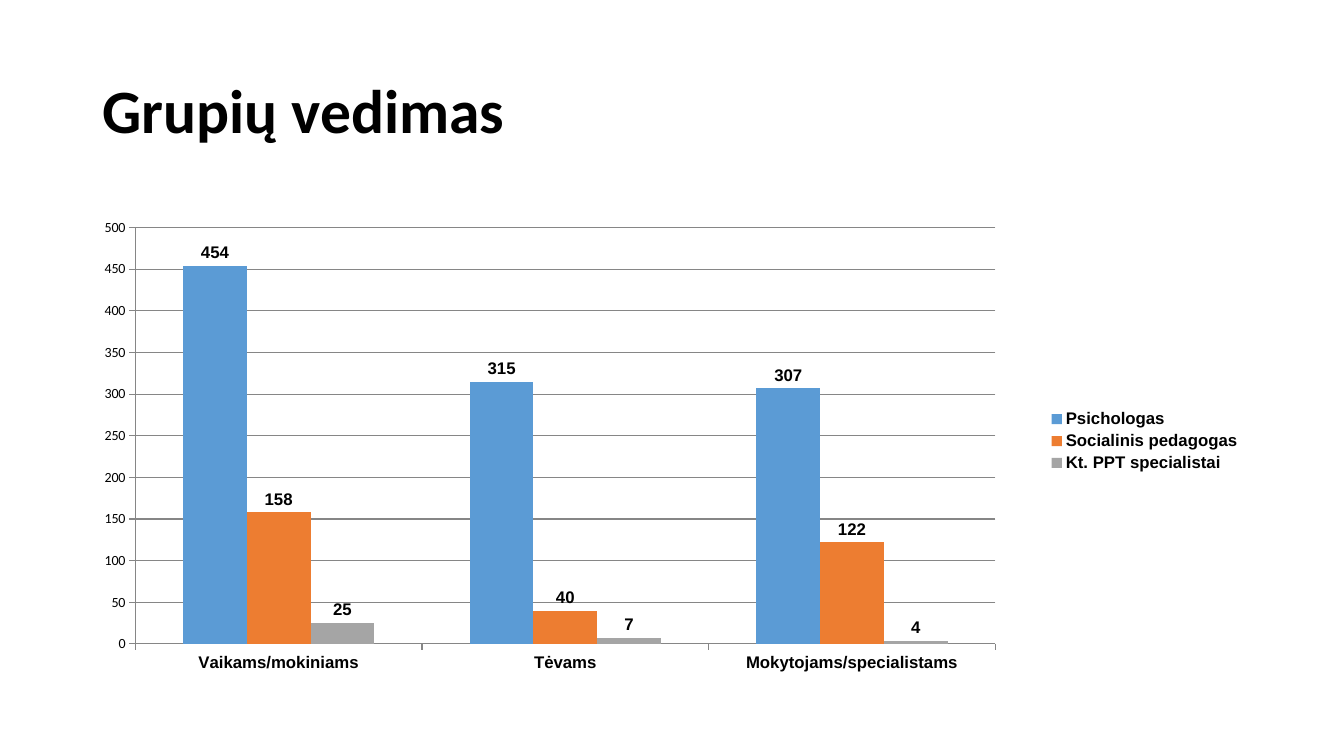
from lxml import etree
from pptx import Presentation
from pptx.chart.data import CategoryChartData
from pptx.dml.color import RGBColor
from pptx.enum.chart import XL_CHART_TYPE, XL_LABEL_POSITION, XL_LEGEND_POSITION, XL_TICK_MARK
from pptx.enum.text import MSO_ANCHOR, PP_ALIGN
from pptx.oxml.ns import qn
from pptx.util import Cm, Pt

COLUMNS = XL_CHART_TYPE.COLUMN_CLUSTERED
OUTSIDE_END = XL_LABEL_POSITION.OUTSIDE_END
RIGHT = XL_LEGEND_POSITION.RIGHT
TICK_OUTSIDE = XL_TICK_MARK.OUTSIDE
MIDDLE = MSO_ANCHOR.MIDDLE
LEFT = PP_ALIGN.LEFT

BLACK = "000000"
GREY = "868686"
TITLE_ONLY = 5
CATEGORIES = ["Vaikams/mokiniams", "Tėvams", "Mokytojams/specialistams"]
SERIES = [
    ("Psichologas", [454, 315, 307], "5B9BD5"),
    ("Socialinis pedagogas", [158, 40, 122], "ED7D31"),
    ("Kt. PPT specialistai", [25, 7, 4], "A5A5A5"),
]
PLOT_LAYOUT = [
    ("layoutTarget", "inner"), ("xMode", "edge"), ("yMode", "edge"),
    ("x", "0.037"), ("y", "0.055"), ("w", "0.742"), ("h", "0.868"),
]


def color(hex_string):
    """Return the colour for a hex string."""
    return RGBColor.from_string(hex_string)


def style_font(font, name, size, bold):
    """Set the face, size and weight of black text."""
    font.name = name
    font.size = Pt(size)
    font.bold = bold
    font.color.rgb = color(BLACK)


def style_line(line):
    """Set the thin grey line of axes and gridlines."""
    line.color.rgb = color(GREY)
    line.width = Pt(0.75)


def place_plot(chart):
    """Fix the inner plot area as fractions of the chart."""
    plot_area = chart.element.find(".//" + qn("c:plotArea"))
    for layout in plot_area.findall(qn("c:layout")):
        plot_area.remove(layout)
    layout = etree.Element(qn("c:layout"))
    manual = etree.SubElement(layout, qn("c:manualLayout"))
    for tag, value in PLOT_LAYOUT:
        etree.SubElement(manual, qn("c:" + tag)).set("val", value)
    plot_area.insert(0, layout)


def add_title(page, left, top, width, height):
    """Place the slide title in the given box."""
    title = page.shapes.title
    title.left, title.top, title.width, title.height = left, top, width, height
    frame = title.text_frame
    frame.text = "Grupių vedimas"
    frame.vertical_anchor = MIDDLE
    para = frame.paragraphs[0]
    para.alignment = LEFT
    para.line_spacing = 0.9
    style_font(para.runs[0].font, "Calibri", 44, True)


def style_axes(chart):
    """Format both axes and the horizontal gridlines."""
    for axis in (chart.category_axis, chart.value_axis):
        axis.major_tick_mark = TICK_OUTSIDE
        style_line(axis.format.line)
    style_font(chart.category_axis.tick_labels.font, "Arial", 12, True)
    values = chart.value_axis
    values.minimum_scale, values.maximum_scale, values.major_unit = 0, 500, 50
    values.has_major_gridlines = True
    style_line(values.major_gridlines.format.line)
    style_font(values.tick_labels.font, "Calibri", 10, False)


def add_group_chart(page, left, top, width, height):
    """Place the column chart with its legend in the given box."""
    data = CategoryChartData(number_format="General")
    data.categories = CATEGORIES
    for name, values, _ in SERIES:
        data.add_series(name, values)
    chart = page.shapes.add_chart(COLUMNS, left, top, width, height, data).chart
    chart.has_title = False
    style_font(chart.font, "Calibri", 10, False)
    place_plot(chart)
    style_axes(chart)

    chart.has_legend = True
    chart.legend.position = RIGHT
    chart.legend.include_in_layout = False
    style_font(chart.legend.font, "Arial", 12, True)

    plot = chart.plots[0]
    plot.gap_width = 150
    plot.overlap = 0
    plot.vary_by_categories = False
    for series, (_, _, fill) in zip(plot.series, SERIES):
        series.format.fill.solid()
        series.format.fill.fore_color.rgb = color(fill)
        labels = series.data_labels
        labels.show_value = True
        labels.position = OUTSIDE_END
        style_font(labels.font, "Arial", 12, True)


def main():
    """Build the deck and save it."""
    deck = Presentation()
    deck.slide_width, deck.slide_height = Cm(33.87), Cm(19.05)
    page = deck.slides.add_slide(deck.slide_layouts[TITLE_ONLY])
    left, width = Cm(2.33), Cm(29.21)
    add_title(page, left, Cm(1.01), width, Cm(3.68))
    add_group_chart(page, left, Cm(5.07), width, Cm(12.09))
    deck.save("out.pptx")


if __name__ == "__main__":
    main()
